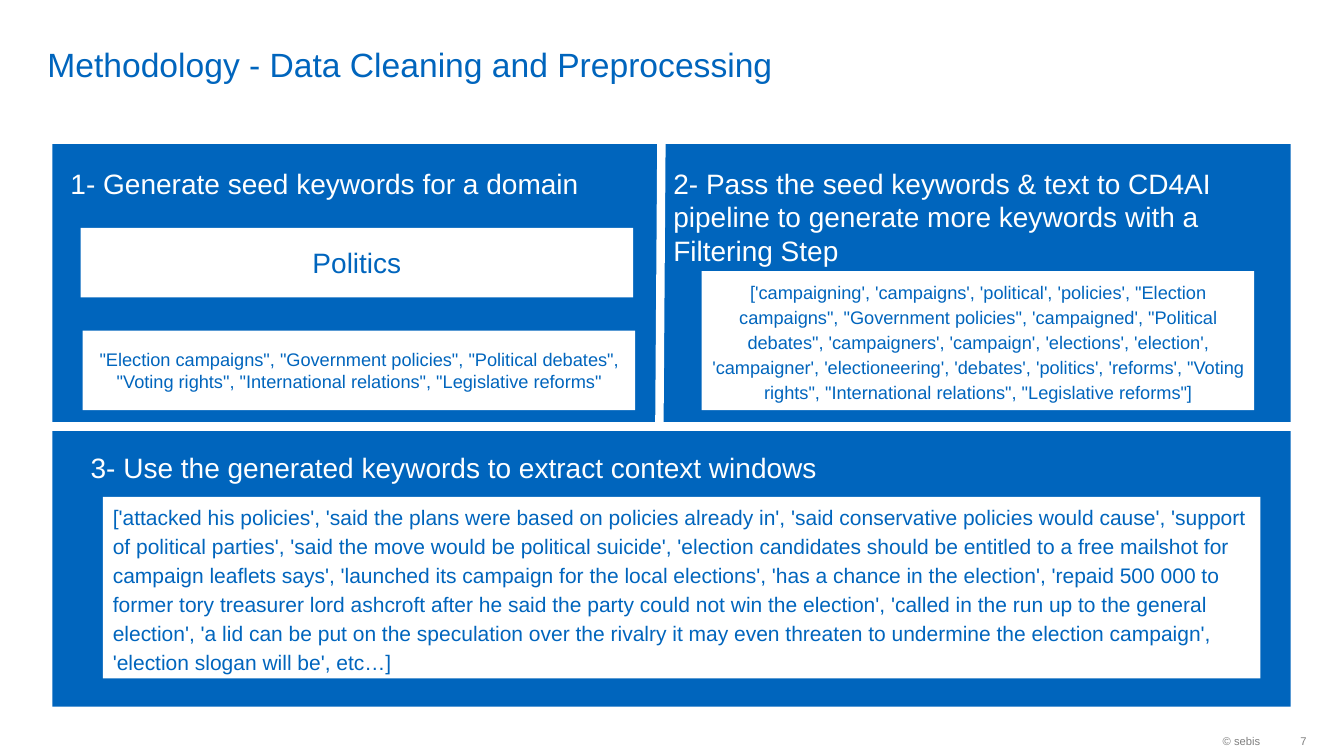
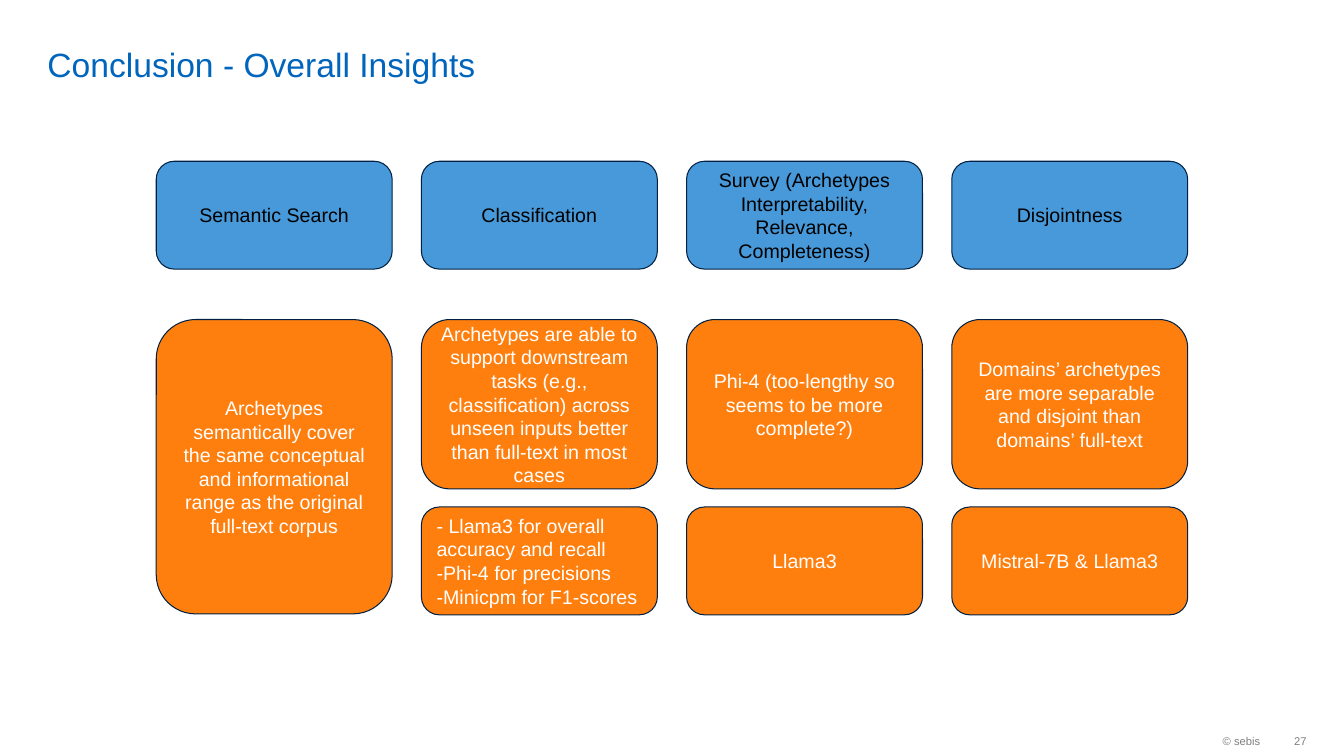
from lxml import etree
from pptx import Presentation
from pptx.dml.color import RGBColor
from pptx.enum.shapes import MSO_CONNECTOR, MSO_SHAPE
from pptx.enum.text import MSO_ANCHOR as Anchor, MSO_AUTO_SIZE, PP_ALIGN as Align
from pptx.oxml.ns import qn
from pptx.util import Inches, Pt

FONT = "Arial"
WHITE, BLACK, GREY = "FFFFFF", "000000", "7F7F7F"
BLUE, SKY, ORANGE, NAVY = "0065BD", "4799D9", "FF7F0E", "002143"
color = RGBColor.from_string


def write(shape, text, size, text_color, align=Align.LEFT, anchor=Anchor.MIDDLE,
          insets=(0.1, 0.1, 0.1, 0.1), line_spacing=None):
    """Fill a shape with text, one paragraph a line; insets run left, top, right, bottom."""
    frame = shape.text_frame
    frame.text = text
    frame.word_wrap = True
    frame.auto_size = MSO_AUTO_SIZE.NONE
    frame.vertical_anchor = anchor
    (frame.margin_left, frame.margin_top,
     frame.margin_right, frame.margin_bottom) = map(Inches, insets)
    for paragraph in frame.paragraphs:
        paragraph.alignment = align
        paragraph.line_spacing = line_spacing
        paragraph.font.name = FONT
        paragraph.font.size = Pt(size)
        paragraph.font.color.rgb = color(text_color)


def add_box(slide, kind, bounds, fill, outline=None):
    shape = slide.shapes.add_shape(kind, *map(Inches, bounds))
    shape.shadow.inherit = False
    shape.fill.solid()
    shape.fill.fore_color.rgb = color(fill)
    if outline:
        shape.line.color.rgb = color(outline)
        shape.line.width = Pt(0.75)
    else:
        shape.line.fill.background()
    return shape


presentation = Presentation()
presentation.slide_width = Inches(13.33)
presentation.slide_height = Inches(7.5)

# Shared title and footer
slides = []
for heading, number in [("Methodology - Data Cleaning and Preprocessing", "7"),
                        ("Conclusion - Overall Insights", "27")]:
    slide = presentation.slides.add_slide(presentation.slide_layouts[5])
    title = slide.shapes.title
    title.left, title.top, title.width, title.height = map(Inches, (0.37, 0.05, 11.58, 0.79))
    write(title, heading, 24, BLUE, anchor=Anchor.BOTTOM, insets=(0.1, 0, 0.1, 0))
    for text, left, width, right_inset in [("© sebis", 10.26, 2.34, 0.1),
                                           (number, 12.6, 0.36, 0)]:
        footer = slide.shapes.add_textbox(*map(Inches, (left, 7.19, width, 0.32)))
        write(footer, text, 8, GREY, Align.RIGHT, insets=(0.1, 0.05, right_inset, 0.05))
    slides.append(slide)
methodology, conclusion = slides

# Methodology: a blue panel split into three steps
add_box(methodology, MSO_SHAPE.RECTANGLE, (0.52, 1.43, 12.28, 5.58), BLUE)
for start_x, start_y, end_x, end_y in [(0.52, 4.23, 12.8, 4.23), (6.56, 1.41, 6.54, 4.23)]:
    divider = methodology.shapes.add_connector(
        MSO_CONNECTOR.STRAIGHT, *map(Inches, (start_x, start_y, end_x, end_y)))
    divider.line.color.rgb = color(WHITE)
    divider.line.width = Pt(6)
    etree.SubElement(divider._element.spPr, qn("a:effectLst"))

steps = [
    ("1- Generate seed keywords for a domain", (0.6, 1.55, 5.92, 2.53)),
    ("2- Pass the seed keywords & text to CD4AI pipeline to generate more keywords "
     "with a Filtering Step", (6.58, 1.55, 6.14, 2.53)),
    ("3- Use the generated keywords to extract context windows", (0.8, 4.37, 11.92, 2.53)),
]
for text, bounds in steps:
    step = methodology.shapes.add_textbox(*map(Inches, bounds))
    write(step, text, 20, WHITE, anchor=Anchor.TOP)

examples = [
    ("Politics", (0.8, 2.26, 5.48, 0.69), 20, Align.CENTER, None),
    ('"Election campaigns", "Government policies", "Political debates", "Voting rights", '
     '"International relations", "Legislative reforms"',
     (0.82, 3.28, 5.48, 0.79), 13, Align.CENTER, None),
    ("['campaigning', 'campaigns', 'political', 'policies', \"Election campaigns\", "
     "\"Government policies\", 'campaigned', \"Political debates\", 'campaigners', "
     "'campaign', 'elections', 'election', 'campaigner', 'electioneering', 'debates', "
     "'politics', 'reforms', \"Voting rights\", \"International relations\", "
     "\"Legislative reforms\"]",
     (6.96, 2.69, 5.48, 1.38), 13, Align.CENTER, 1.15),
    ("['attacked his policies', 'said the plans were based on policies already in', "
     "'said conservative policies would cause', 'support of political parties', "
     "'said the move would be political suicide', 'election candidates should be entitled "
     "to a free mailshot for campaign leaflets says', 'launched its campaign for the local "
     "elections', 'has a chance in the election', 'repaid 500 000 to former tory treasurer "
     "lord ashcroft after he said the party could not win the election', 'called in the run "
     "up to the general election', 'a lid can be put on the speculation over the rivalry it "
     "may even threaten to undermine the election campaign', 'election slogan will be', etc…]",
     (1.02, 4.93, 11.48, 1.8), 15, Align.LEFT, 1.15),
]
for text, bounds, size, align, line_spacing in examples:
    example = add_box(methodology, MSO_SHAPE.RECTANGLE, bounds, WHITE)
    write(example, text, size, BLUE, align, line_spacing=line_spacing)

# Conclusion: one column per evaluation, a blue header above its orange findings
COLUMN_LEFT, COLUMN_PITCH, COLUMN_WIDTH = 1.55, 2.63, 2.34
HEADER, FINDING, MODELS, TALL_FINDING = (1.6, 1.07), (3.17, 1.68), (5.03, 1.07), (3.17, 2.92)
columns = [
    [("Semantic Search", HEADER),
     ("Archetypes semantically cover the same conceptual and informational range as "
      "the original full-text corpus", TALL_FINDING)],
    [("Classification", HEADER),
     ("Archetypes are able to support downstream tasks (e.g., classification) across "
      "unseen inputs better than full-text in most cases", FINDING),
     ("- Llama3 for overall accuracy and recall\n-Phi-4 for precisions\n"
      "-Minicpm for F1-scores", MODELS)],
    [("Survey (Archetypes Interpretability, Relevance, Completeness)", HEADER),
     ("Phi-4 (too-lengthy so seems to be more complete?)", FINDING),
     ("Llama3", MODELS)],
    [("Disjointness", HEADER),
     ("Domains’ archetypes are more separable and disjoint than domains’ full-text", FINDING),
     ("Mistral-7B & Llama3", MODELS)],
]
for index, cards in enumerate(columns):
    left = COLUMN_LEFT + index * COLUMN_PITCH
    for text, row in cards:
        top, height = row
        fill, text_color = (SKY, BLACK) if row == HEADER else (ORANGE, WHITE)
        card = add_box(conclusion, MSO_SHAPE.ROUNDED_RECTANGLE,
                       (left, top, COLUMN_WIDTH, height), fill, NAVY)
        write(card, text, 14, text_color, Align.LEFT if "\n" in text else Align.CENTER)

presentation.save("out.pptx")
